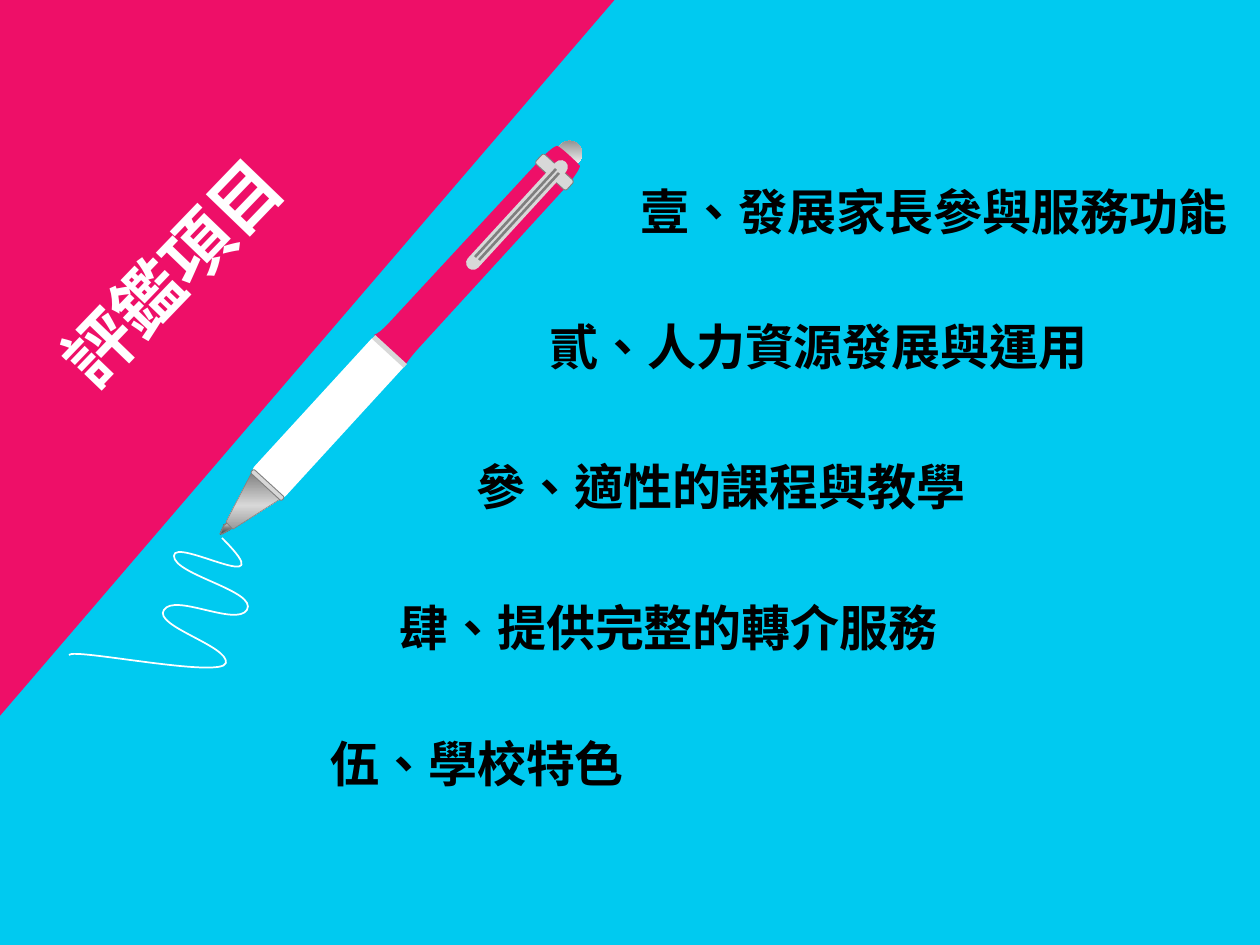
from math import cos, radians, sin

from lxml import etree
from pptx import Presentation
from pptx.dml.color import RGBColor
from pptx.enum.shapes import MSO_CONNECTOR, MSO_SHAPE
from pptx.enum.text import MSO_ANCHOR, MSO_AUTO_SIZE, PP_ALIGN
from pptx.oxml.ns import qn
from pptx.util import Pt

RECT = MSO_SHAPE.RECTANGLE
ROUND = MSO_SHAPE.ROUNDED_RECTANGLE
TRIANGLE = MSO_SHAPE.RIGHT_TRIANGLE
STRAIGHT = MSO_CONNECTOR.STRAIGHT
TOP, MIDDLE = MSO_ANCHOR.TOP, MSO_ANCHOR.MIDDLE
LEFT, CENTER = PP_ALIGN.LEFT, PP_ALIGN.CENTER

EMU_PER_PX = 914400 / 126
FONT = "Noto Sans CJK SC"
PINK, CYAN, WHITE, BLACK = "EE0F68", "00CAF0", "FFFFFF", "000000"
DARK, GREY, SILVER = "262626", "7F7F7F", "D8D8D8"
TILT = 312.5


def px(n):
    return round(n * EMU_PER_PX)


def color(value):
    return RGBColor.from_string(value)


def gradient(shape, stops, angle):
    shape.fill.gradient()
    shape.fill.gradient_angle = angle
    stop_list = shape._element.spPr.find(qn("a:gradFill")).find(qn("a:gsLst"))
    for old in list(stop_list):
        stop_list.remove(old)
    for percent, value in stops:
        stop = etree.SubElement(stop_list, qn("a:gs"), pos=str(percent * 1000))
        etree.SubElement(stop, qn("a:srgbClr"), val=value)


def style(shape, fill=None, line=None, width=1):
    shape.shadow.inherit = False
    if fill:
        shape.fill.solid()
        shape.fill.fore_color.rgb = color(fill)
    else:
        shape.fill.background()
    if line:
        shape.line.color.rgb = color(line)
        shape.line.width = Pt(width)
    else:
        shape.line.fill.background()
    return shape


def block(s, kind, box, fill, rotation=0, radius=None, **line):
    shape = s.shapes.add_shape(kind, *map(px, box))
    shape.rotation = rotation
    if radius is not None:
        shape.adjustments[0] = radius
    return style(shape, fill, **line)


def turn(point, angle):
    c, d = cos(radians(angle)), sin(radians(angle))
    return point[0] * c - point[1] * d, point[0] * d + point[1] * c


def outline(s, x, y, start, segments, close=True, rotation=0, **look):
    """Path of lines (one point) and Bézier curves (three points) from (x, y)."""
    def place(point):
        return tuple(map(px, turn((x + point[0], y + point[1]), -rotation)))

    ends = [place(segment[-1]) for segment in segments]
    builder = s.shapes.build_freeform(*place(start), scale=1.0)
    builder.add_line_segments(ends, close=close)
    shape = builder.convert_to_shape()
    left, top = shape.left, shape.top

    # Bend the straight segments that have control points
    lines = list(shape._element.spPr.iter(qn("a:lnTo")))
    for segment, line in zip(segments, lines):
        if len(segment) == 3:
            curve = etree.Element(qn("a:cubicBezTo"))
            for px_x, px_y in map(place, segment):
                etree.SubElement(curve, qn("a:pt"),
                                 x=str(px_x - left), y=str(px_y - top))
            line.getparent().replace(line, curve)

    # Bring the centre back to where it belongs after the rotation
    half_w, half_h = shape.width / 2, shape.height / 2
    cx, cy = turn((left + half_w, top + half_h), rotation)
    shape.left, shape.top = round(cx - half_w), round(cy - half_h)
    shape.rotation = rotation
    return style(shape, **look)


def write(sp, text, size, value, align=LEFT, anchor=TOP):
    tf = sp.text_frame
    tf.word_wrap = True
    tf.auto_size = MSO_AUTO_SIZE.SHAPE_TO_FIT_TEXT
    tf.vertical_anchor = anchor
    p = tf.paragraphs[0]
    p.alignment = align
    r = p.add_run()
    r.text = text
    r.font.name, r.font.size, r.font.bold = FONT, Pt(size), True
    r.font.color.rgb = color(value)
    props = r._r.get_or_add_rPr()
    props.set("lang", "zh-TW")
    etree.SubElement(props, qn("a:ea"), typeface=FONT)


def backdrop(s, x, y):
    block(s, RECT, (x, y, 1328, 949), CYAN)
    block(s, TRIANGLE, (x - 57, y + 52, 777, 667), PINK, 90)


def heading(s, x, y, w, h):
    title = s.shapes.title
    title.left, title.top, title.width, title.height = map(px, (x, y, w, h))
    title.rotation = 313.8
    write(title, "評鑑項目", 40, WHITE, CENTER, MIDDLE)
    s.shapes._spTree.append(title._element)  # in front of the backdrop


def scribble(s, x, y):
    outline(s, x, y, (153, 0), [
        [(217, 64), (105, -2), (105, 18)],
        [(105, 37), (189, 53), (178, 72)],
        [(167, 89), (106, 55), (95, 72)],
        [(84, 88), (160, 108), (157, 125)],
        [(153, 141), (5, 110), (0, 117)]], close=False, line=WHITE)


def pen(s, x, y):
    def part(kind, left, top, w, h, fill, **look):
        return block(s, kind, (x + left, y + top, w, h), fill, TILT, **look)

    # End cap
    cap = part(ROUND, 303, 16, 66, 25, GREY, radius=0.5)
    gradient(cap, [(0, GREY), (51, WHITE), (100, GREY)], 42.5)
    # Writing tip
    tip = outline(s, x, y, (4, 385), [
        [(7, 383)], [(17, 372)], [(22, 377)], [(12, 388)],
        [(9, 390)], [(2, 394)], [(0, 394)]],
        rotation=222.5, line=GREY, width=0.75)
    gradient(tip, [(0, DARK), (36, GREY), (65, WHITE), (80, WHITE), (100, DARK)], 312.5)
    # Grip and cone
    part(ROUND, 17, 256, 183, 43, WHITE, radius=0.11)
    cone = outline(s, x, y, (32, 332), [[(60, 359)], [(13, 389)], [(6, 382)]],
                   rotation=222.5, line=GREY, width=0.25)
    gradient(cone, [(0, GREY), (50, SILVER), (100, GREY)], 132.5)
    # Barrel
    outline(s, x, y, (337, 6), [
        [(339, 5), (360, 25), (360, 26)], [(360, 29), (352, 40), (347, 46)],
        [(197, 210)], [(191, 217), (187, 222), (186, 224)],
        [(154, 195)], [(159, 193), (163, 189), (168, 184)],
        [(319, 21)], [(324, 15), (334, 6), (337, 6)]], rotation=TILT, fill=PINK)
    # Rings and clip
    part(RECT, 167, 190, 5, 43, SILVER)
    part(ROUND, 45, 324, 5, 42, SILVER, radius=0.37, line=GREY, width=0.5)
    part(ROUND, 328, 11, 13, 42, SILVER, radius=0.2, line=GREY, width=0.5)
    part(ROUND, 225, 68, 144, 14, SILVER, radius=0.5)
    for x1, y1, x2, y2 in ((259, 120, 339, 33), (255, 117, 336, 29)):
        groove = s.shapes.add_connector(
            STRAIGHT, *map(px, (x + x1, y + y1, x + x2, y + y2)))
        groove.line.color.rgb = color(GREY)
        groove.line.width = Pt(1.5)
        etree.SubElement(groove._element.spPr, qn("a:effectLst"))


def items(s, x, y):
    for dx, dy, text in ((310, 0, "壹、發展家長參與服務功能"),
                         (219, 135, "貳、人力資源發展與運用"),
                         (146, 275, "參、適性的課程與教學"),
                         (69, 416, "肆、提供完整的轉介服務"),
                         (0, 552, "伍、學校特色")):
        sp = s.shapes.add_textbox(*map(px, (x + dx, y + dy, 658, 72)))
        write(sp, text, 28, BLACK)


def main():
    prs = Presentation()
    prs.slide_width, prs.slide_height = px(1260), px(945)
    s = prs.slides.add_slide(prs.slide_layouts[5])
    backdrop(s, -48, 0)
    heading(s, -96, 223, 534, 97)
    scribble(s, 69, 538)
    pen(s, 220, 140)
    items(s, 318, 175)
    prs.save("out.pptx")


if __name__ == "__main__":
    main()
